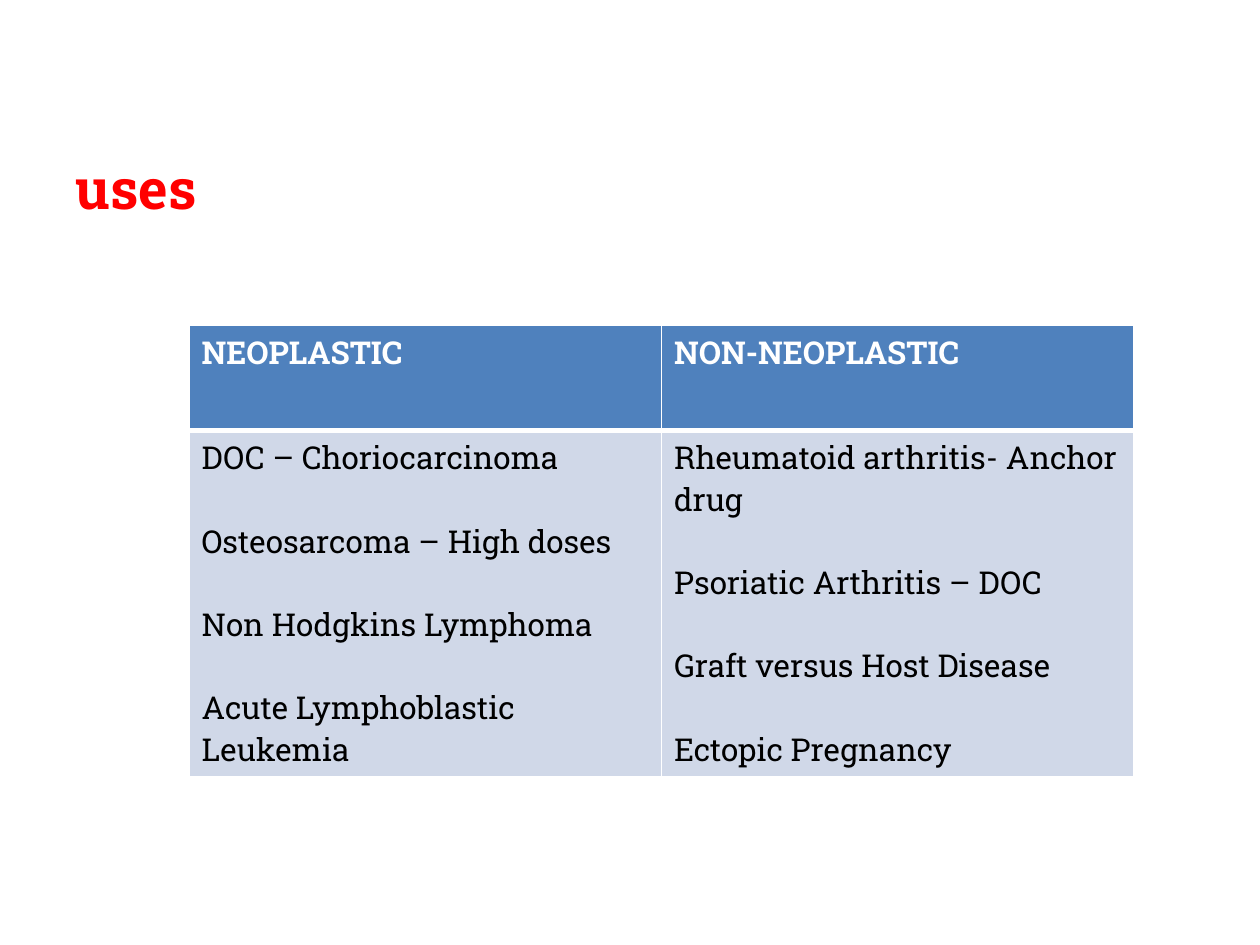
from dataclasses import dataclass

from lxml import etree
from pptx import Presentation
from pptx.dml.color import RGBColor
from pptx.oxml.ns import qn
from pptx.util import Pt

FONT = "Roboto Slab"
WHITE, BLACK, RED = "FFFFFF", "000000", "FF0000"
HEADER_BLUE, BODY_BLUE = "4F81BD", "D0D8E8"
LINE_GAP = Pt(23.8)  # one text line between table entries


@dataclass
class RowStyle:
    height: float
    fill: str
    color: str
    bold: bool
    bottom_border: float


@dataclass
class UseGroup:
    heading: str
    entries: list[str]


HEADER = RowStyle(60, HEADER_BLUE, WHITE, True, 3)
BODY = RowStyle(198, BODY_BLUE, BLACK, False, 1)

GROUPS = [
    UseGroup("NEOPLASTIC", [
        "DOC – Choriocarcinoma",
        "Osteosarcoma – High doses",
        "Non Hodgkins Lymphoma",
        "Acute Lymphoblastic Leukemia",
    ]),
    UseGroup("NON-NEOPLASTIC", [
        "Rheumatoid arthritis- Anchor drug",
        "Psoriatic Arthritis – DOC",
        "Graft versus Host Disease",
        "Ectopic Pregnancy",
    ]),
]


def rgb(value: str) -> RGBColor:
    return RGBColor.from_string(value)


def add_run(p, text: str, size: float, color: str, bold: bool) -> None:
    r = p.add_run()
    r.text = text
    for name, value in {"name": FONT, "size": Pt(size), "bold": bold}.items():
        setattr(r.font, name, value)
    r.font.color.rgb = rgb(color)


def set_borders(cell, widths: dict[str, float]) -> None:
    tc_pr = cell._tc.get_or_add_tcPr()
    for i, (side, width) in enumerate(widths.items()):
        ln = etree.Element(qn(f"a:ln{side}"), w=str(Pt(width)))
        fill = etree.SubElement(ln, qn("a:solidFill"))
        etree.SubElement(fill, qn("a:srgbClr"), val=WHITE)
        tc_pr.insert(i, ln)


def fill_cell(cell, lines: list[str], style: RowStyle, top_border: float) -> None:
    cell.fill.solid()
    cell.fill.fore_color.rgb = rgb(style.fill)
    set_borders(cell, {"L": 1, "R": 1, "T": top_border, "B": style.bottom_border})
    tf = cell.text_frame
    for i, line in enumerate(lines):
        p = tf.add_paragraph() if i else tf.paragraphs[0]
        if i:
            p.space_before = LINE_GAP
        add_run(p, line, 18, style.color, style.bold)


def add_heading(s) -> None:
    title = s.shapes.title
    title.element.getparent().remove(title.element)
    sp = s.placeholders[1]
    box = {"left": 36, "top": 84.24, "width": 648, "height": 398.16}
    for name, value in box.items():
        setattr(sp, name, Pt(value))
    p = sp.text_frame.paragraphs[0]
    add_run(p, "uses", 32, RED, True)
    # No bullet and no hanging indent
    p_pr = p._p.get_or_add_pPr()
    for name in ("marL", "indent"):
        p_pr.set(name, "0")
    etree.SubElement(p_pr, qn("a:buNone"))


def add_uses_table(s) -> None:
    table = s.shapes.add_table(2, len(GROUPS), Pt(108), Pt(186), Pt(540),
                               Pt(HEADER.height + BODY.height)).table
    for row, style in zip(table.rows, (HEADER, BODY)):
        row.height = Pt(style.height)
    for col, group in enumerate(GROUPS):
        fill_cell(table.cell(0, col), [group.heading], HEADER, 1)
        fill_cell(table.cell(1, col), group.entries, BODY, HEADER.bottom_border)


def main() -> None:
    prs = Presentation()
    prs.slide_width, prs.slide_height = Pt(720), Pt(540)
    s = prs.slides.add_slide(prs.slide_layouts[1])
    add_heading(s)
    add_uses_table(s)
    prs.save("out.pptx")


if __name__ == "__main__":
    main()
